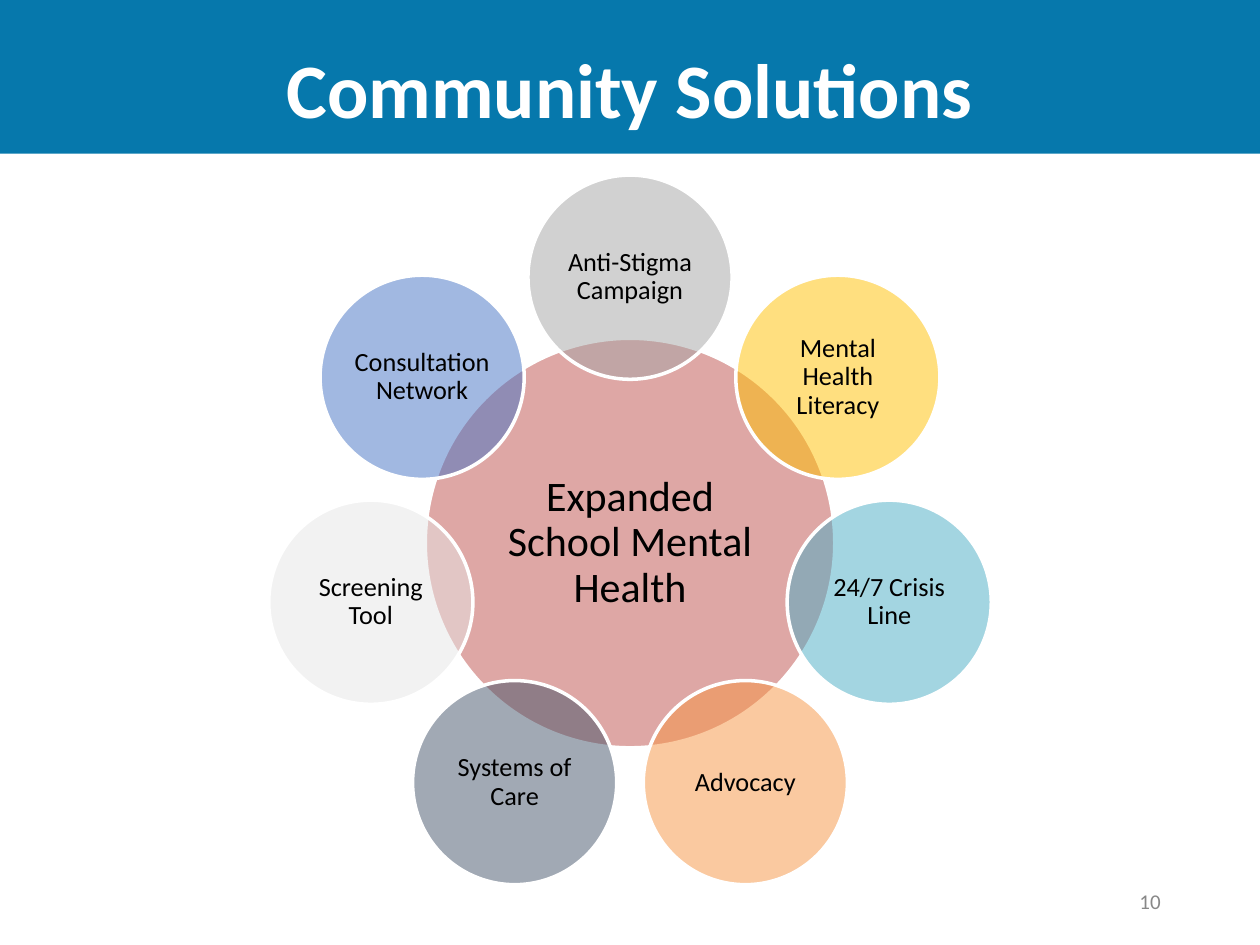
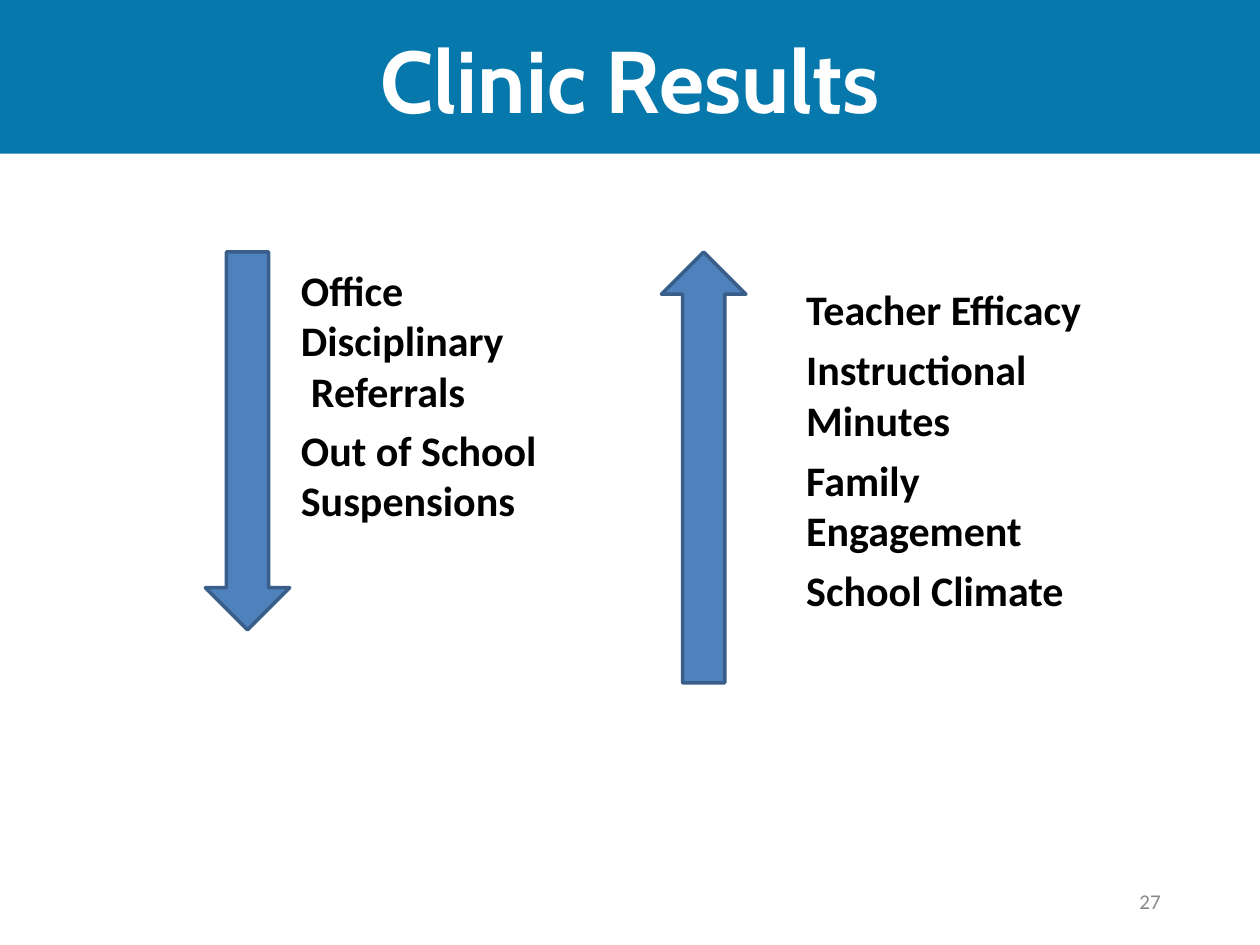
from math import cos, pi, sin

from lxml.etree import SubElement
from pptx import Presentation
from pptx.dml.color import RGBColor
from pptx.enum.shapes import MSO_SHAPE as Shape
from pptx.enum.text import MSO_ANCHOR as Anchor, PP_ALIGN as Align
from pptx.oxml.ns import qn
from pptx.util import Inches, Pt

BAND_BLUE = RGBColor(0x06, 0x78, 0xAC)
WHITE = RGBColor(0xFF, 0xFF, 0xFF)
BLACK = RGBColor(0x00, 0x00, 0x00)
NUMBER_GRAY = RGBColor(0x88, 0x88, 0x88)
ARROW_BLUE = RGBColor(0x4F, 0x81, 0xBD)
ARROW_EDGE = RGBColor(0x39, 0x5E, 0x89)
HUB_RED = RGBColor(0xBF, 0x50, 0x4D)
GRAY = RGBColor(0xA5, 0xA5, 0xA5)
GOLD = RGBColor(0xFF, 0xC0, 0x00)
TEAL = RGBColor(0x49, 0xAC, 0xC5)
ORANGE = RGBColor(0xF7, 0x95, 0x43)
SLATE = RGBColor(0x44, 0x54, 0x6A)
PALE_GRAY = RGBColor(0xE7, 0xE6, 0xE6)
BLUE = RGBColor(0x44, 0x72, 0xC4)

SLIDE_WIDTH, SLIDE_HEIGHT = 10, 7.5
BODY_FONT, DISPLAY_FONT = "Calibri", "Cabin"

SOLUTIONS = [
    ("Anti-Stigma Campaign", GRAY),
    ("Mental Health Literacy", GOLD),
    ("24/7 Crisis Line", TEAL),
    ("Advocacy", ORANGE),
    ("Systems of Care", SLATE),
    ("Screening Tool", PALE_GRAY),
    ("Consultation Network", BLUE),
]
DECREASES = ["Office Disciplinary", "Referrals", "Out of School Suspensions"]
INCREASES = ["Teacher Efficacy", "Instructional Minutes",
             "Family Engagement", "School Climate"]


def write(frame, lines, size, color, font=BODY_FONT, bold=False,
          align=Align.LEFT, anchor=Anchor.TOP, spacing=None, insets=(0.1, 0.05)):
    """Fill a text frame with equally styled paragraphs."""
    frame.word_wrap = True
    frame.vertical_anchor = anchor
    frame.margin_left = frame.margin_right = Inches(insets[0])
    frame.margin_top = frame.margin_bottom = Inches(insets[1])
    frame.text = "\n".join(lines)
    for paragraph in frame.paragraphs:
        paragraph.alignment = align
        paragraph.line_spacing = spacing
        for run in paragraph.runs:
            run.font.name, run.font.size = font, Pt(size)
            run.font.bold, run.font.color.rgb = bold, color


def add_text(slide, box, lines, size, color, **style):
    """Add a text box and return its text frame."""
    frame = slide.shapes.add_textbox(*map(Inches, box)).text_frame
    write(frame, lines, size, color, **style)
    return frame


def add_figure(slide, kind, box, fill, edge=None):
    """Add a flat preset shape with an optional 2 pt edge."""
    figure = slide.shapes.add_shape(kind, *map(Inches, box))
    figure.shadow.inherit = False
    figure.fill.solid()
    figure.fill.fore_color.rgb = fill
    if edge is None:
        figure.line.fill.background()
    else:
        figure.line.color.rgb = edge
        figure.line.width = Pt(2)
    return figure


def add_framed_slide(prs, title, title_box, number, **title_style):
    """Add a slide with the blue band, its title and the page number."""
    slide = prs.slides.add_slide(prs.slide_layouts[6])
    add_figure(slide, Shape.RECTANGLE, (0, 0, SLIDE_WIDTH, 1.22), BAND_BLUE)
    add_text(slide, title_box, [title], color=WHITE, bold=True,
             align=Align.CENTER, anchor=Anchor.MIDDLE, **title_style)
    add_text(slide, (7.06, 6.95, 2.25, 0.4), [str(number)], 12, NUMBER_GRAY,
             align=Align.RIGHT, anchor=Anchor.MIDDLE)
    return slide


def add_bubble(slide, center_x, center_y, diameter, label, fill, size):
    """Add a half-transparent labelled circle around a centre point."""
    box = (center_x - diameter / 2, center_y - diameter / 2, diameter, diameter)
    bubble = add_figure(slide, Shape.OVAL, box, fill, WHITE)
    tint = bubble.fill._xPr.find(qn("a:solidFill"))[0]
    SubElement(tint, qn("a:alpha"), val="50000")
    write(bubble.text_frame, [label], size, BLACK, align=Align.CENTER,
          anchor=Anchor.MIDDLE, spacing=0.9, insets=(0.02, 0.02))


def add_radial_diagram(slide, box):
    """Place the hub and a ring of solutions, the first at the top of the box."""
    left, top, width = box
    hub, satellite = 3.25, 1.62
    orbit = 2.11
    center_x, center_y = left + width / 2, top + satellite / 2 + orbit
    add_bubble(slide, center_x, center_y, hub,
               "Expanded School Mental Health", HUB_RED, 24)
    for index, (label, fill) in enumerate(SOLUTIONS):
        angle = 2 * pi * index / len(SOLUTIONS)
        add_bubble(slide, center_x + orbit * sin(angle),
                   center_y - orbit * cos(angle), satellite, label, fill, 15)


def add_trend(slide, kind, arrow_box, text_box, outcomes, gap):
    """Place a trend arrow beside its outcomes and return their text frame."""
    add_figure(slide, kind, arrow_box, ARROW_BLUE, ARROW_EDGE)
    frame = add_text(slide, text_box, outcomes, 24, BLACK, bold=True,
                     insets=(0.1, 0.1))
    for paragraph in frame.paragraphs[1:]:
        paragraph.space_before = Pt(gap)
    return frame


def build_solutions(prs):
    """Build the community solutions slide."""
    slide = add_framed_slide(prs, "Community Solutions", (0.5, 0.23, 9, 1.02),
                             10, size=44, spacing=0.9)
    add_radial_diagram(slide, (2.13, 1.39, 5.74))


def build_results(prs):
    """Build the clinic results slide."""
    slide = add_framed_slide(prs, "Clinic Results", (0, 0, SLIDE_WIDTH, 1.24),
                             27, size=50, font=DISPLAY_FONT)
    decreases = add_trend(slide, Shape.DOWN_ARROW, (1.63, 2, 0.67, 3),
                          (2.29, 2, 2.37, 2.27), DECREASES, 4.8)
    referrals = decreases.paragraphs[1]
    referrals.space_before = Pt(0)
    referrals._p.get_or_add_pPr().set("marL", str(Inches(0.08)))
    add_trend(slide, Shape.UP_ARROW, (5.25, 2, 0.67, 3.42),
              (6.3, 2.15, 2.72, 3.17), INCREASES, 5.6)


def main():
    """Build and save the presentation."""
    prs = Presentation()
    prs.slide_width, prs.slide_height = Inches(SLIDE_WIDTH), Inches(SLIDE_HEIGHT)
    build_solutions(prs)
    build_results(prs)
    prs.save("out.pptx")


if __name__ == "__main__":
    main()
